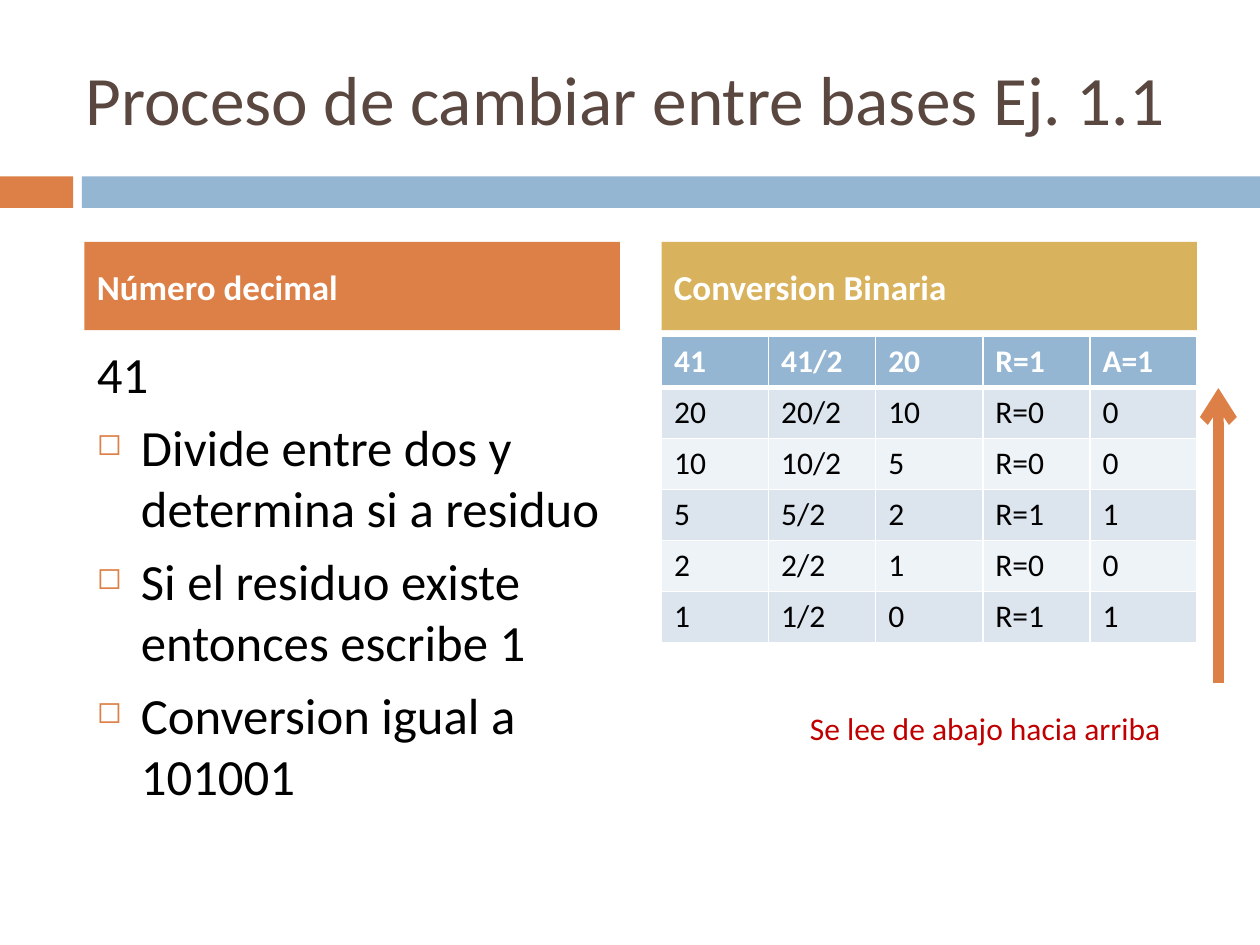
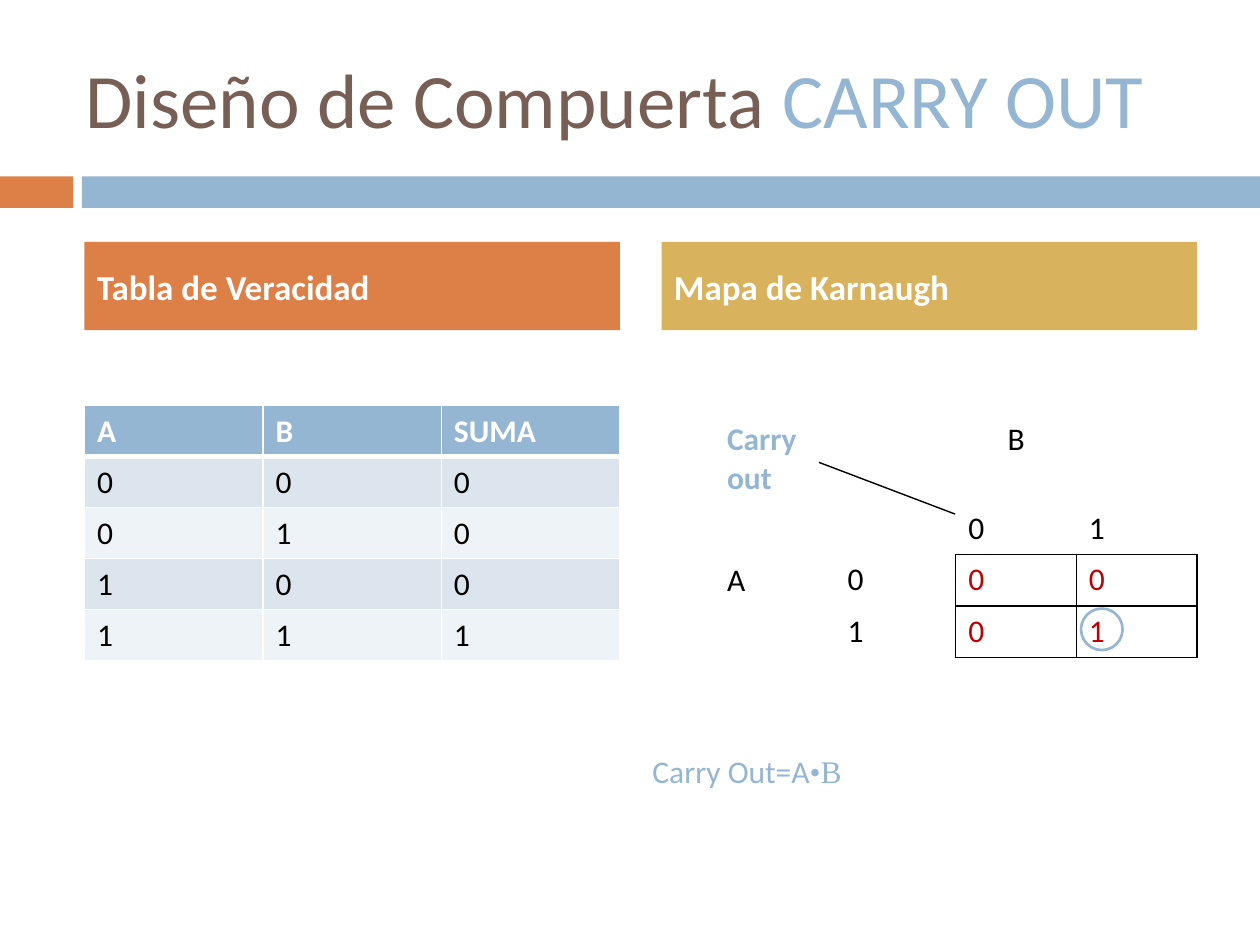
from lxml.etree import SubElement
from pptx import Presentation
from pptx.dml.color import RGBColor
from pptx.enum.shapes import MSO_CONNECTOR as CONNECTOR, MSO_SHAPE as SHAPE
from pptx.enum.text import MSO_ANCHOR as ANCHOR, MSO_AUTO_SIZE as AUTO_SIZE, PP_ALIGN as ALIGN
from pptx.oxml.ns import qn
from pptx.util import Inches, Pt

# Palette
ORANGE = RGBColor(0xDD, 0x80, 0x47)
BLUE = RGBColor(0x94, 0xB6, 0xD2)
GOLD = RGBColor(0xD8, 0xB2, 0x5C)
BROWN = RGBColor(0x77, 0x5F, 0x55)
DARK_BROWN = RGBColor(0x59, 0x47, 0x40)
RED = RGBColor(0xC0, 0x00, 0x00)
BLACK = RGBColor(0x00, 0x00, 0x00)
WHITE = RGBColor(0xFF, 0xFF, 0xFF)
BAND_DARK = RGBColor(0xDC, 0xE5, 0xEE)
BAND_LIGHT = RGBColor(0xEE, 0xF3, 0xF7)

# Shared layout, in inches
LEFT_COLUMN, RIGHT_COLUMN, COLUMN_WIDTH = 0.67, 5.25, 4.25
ROW_HEIGHT = 0.405
FONT = "Calibri"


def box(*inches):
    return [Inches(value) for value in inches]


def add_run(paragraph, text, color, size=18, **formats):
    run = paragraph.add_run()
    run.text = text
    run.font.color.rgb = color
    for name, value in {"name": FONT, "size": Pt(size), "bold": False, **formats}.items():
        setattr(run.font, name, value)


def add_text(slide, area, **frame_formats):
    frame = slide.shapes.add_textbox(*box(*area)).text_frame
    for name, value in {"word_wrap": True, **frame_formats}.items():
        setattr(frame, name, value)
    return frame


def add_block(slide, area, color):
    block = slide.shapes.add_shape(SHAPE.RECTANGLE, *box(*area))
    block.shadow.inherit = False
    block.fill.solid()
    block.fill.fore_color.rgb = color
    block.line.fill.background()
    return block


def add_heading(slide, left, text, color):
    frame = add_block(slide, (left, 1.92, COLUMN_WIDTH, 0.7), color).text_frame
    frame.vertical_anchor = ANCHOR.MIDDLE
    paragraph = frame.paragraphs[0]
    paragraph.alignment = ALIGN.LEFT
    add_run(paragraph, text, WHITE, 20, bold=True)


def start_slide(deck, title_parts, title_size, left_heading, right_heading):
    """Add a slide with the band, the title and the two column headings."""
    slide = deck.slides.add_slide(deck.slide_layouts[6])
    add_block(slide, (0, 1.4, 0.58, 0.25), ORANGE)
    add_block(slide, (0.65, 1.4, 9.35, 0.25), BLUE)
    title = add_text(slide, (0.58, 0.3, 8.92, 0.95), vertical_anchor=ANCHOR.MIDDLE)
    for text, color in title_parts:
        add_run(title.paragraphs[0], text, color, title_size)
    add_heading(slide, LEFT_COLUMN, left_heading, ORANGE)
    add_heading(slide, RIGHT_COLUMN, right_heading, GOLD)
    return slide


def add_line(slide, start, end, color, width, arrow=False):
    connector = slide.shapes.add_connector(CONNECTOR.STRAIGHT, *box(*start, *end))
    connector.line.color.rgb = color
    connector.line.width = Pt(width)
    properties = connector._element.spPr
    if arrow:
        SubElement(properties.find(qn("a:ln")), qn("a:tailEnd"), type="arrow")
    SubElement(properties, qn("a:effectLst"))


def set_borders(cell, color, widths):
    """Draw cell edges; widths maps L, R, T, B to points."""
    properties = cell._tc.get_or_add_tcPr()
    for side in "LRTB":
        if side in widths:
            edge = SubElement(properties, qn(f"a:ln{side}"), w=str(Pt(widths[side])))
            SubElement(SubElement(edge, qn("a:solidFill")), qn("a:srgbClr"), val=str(color))


def add_grid(slide, area, row_heights, column_count):
    left, top, width = area
    grid = slide.shapes.add_table(len(row_heights), column_count,
                                  *box(left, top, width, sum(row_heights))).table
    for row, height in zip(grid.rows, row_heights):
        row.height = Inches(height)
    for name in ("first_row", "horz_banding"):
        setattr(grid, name, False)
    return grid


def add_banded_table(slide, area, rows):
    grid = add_grid(slide, area, [ROW_HEIGHT] * len(rows), len(rows[0]))
    for r, values in enumerate(rows):
        header = r == 0
        fill = BLUE if header else (BAND_LIGHT, BAND_DARK)[r % 2]
        edges = {"L": 1, "R": 1, "T": 1, "B": 3} if header else {"L": 1, "R": 1, "B": 1}
        for c, value in enumerate(values):
            cell = grid.cell(r, c)
            set_borders(cell, WHITE, edges)
            cell.fill.solid()
            cell.fill.fore_color.rgb = fill
            add_run(cell.text_frame.paragraphs[0], value,
                    WHITE if header else BLACK, bold=header)


def add_karnaugh_map(slide, area, rows):
    grid = add_grid(slide, area, [0.7] + [0.41] * 3, 4)
    grid.cell(0, 1).merge(grid.cell(0, 3))
    grid.cell(1, 0).merge(grid.cell(3, 0))
    for r, values in enumerate(rows):
        for c, value in enumerate(values):
            cell = grid.cell(r, c)
            in_map = r >= 2 and c >= 2
            if in_map:
                set_borders(cell, BLACK, dict.fromkeys("LRTB", 1))
            elif r == 1 and c >= 2:
                set_borders(cell, BLACK, {"B": 1})
            elif r >= 2 and c == 1:
                set_borders(cell, BLACK, {"R": 1})
            cell.fill.background()
            if value:
                corner = r == c == 0
                color = BLUE if corner else RED if in_map else BLACK
                add_run(cell.text_frame.paragraphs[0], value, color, bold=corner)
    grid.cell(0, 1).text_frame.paragraphs[0].alignment = ALIGN.CENTER
    grid.cell(1, 0).vertical_anchor = ANCHOR.MIDDLE


def add_steps(slide, area, number, steps):
    """Write the number, then its steps with square bullets."""
    frame = add_text(slide, area)
    for i, text in enumerate([number, *steps]):
        paragraph = frame.add_paragraph() if i else frame.paragraphs[0]
        paragraph.space_before = Pt(7)
        add_run(paragraph, text, BLACK, 29)
        properties = paragraph._p.get_or_add_pPr()
        properties.set("marL", str(Inches(0.35)))
        properties.set("indent", str(Inches(-0.35)))
        if i:
            bullet_color = SubElement(properties, qn("a:buClr"))
            SubElement(bullet_color, qn("a:srgbClr"), val=str(ORANGE))
            SubElement(properties, qn("a:buSzPct"), val="60000")
            SubElement(properties, qn("a:buChar"), char="◻")


def build_base_change(deck):
    slide = start_slide(deck, [("Proceso de cambiar entre bases Ej. 1.1", DARK_BROWN)], 39.6,
                        "Número decimal", "Conversion Binaria")
    add_steps(slide, (LEFT_COLUMN, 2.67, COLUMN_WIDTH, 3.92), "41",
              ["Divide entre dos y determina si a residuo",
               "Si el residuo existe entonces escribe 1",
               "Conversion igual a 101001"])
    add_banded_table(slide, (RIGHT_COLUMN, 2.67, COLUMN_WIDTH), [
        ("41", "41/2", "20", "R=1", "A=1"),
        ("20", "20/2", "10", "R=0", "0"),
        ("10", "10/2", "5", "R=0", "0"),
        ("5", "5/2", "2", "R=1", "1"),
        ("2", "2/2", "1", "R=0", "0"),
        ("1", "1/2", "0", "R=1", "1"),
    ])
    # Reading direction
    add_line(slide, (9.67, 5.42), (9.67, 3.08), ORANGE, 6, arrow=True)
    reading_note = add_text(slide, (6.33, 5.58, 3, 0.71))
    add_run(reading_note.paragraphs[0], "Se lee de abajo hacia arriba", RED)


def build_carry_out(deck):
    slide = start_slide(deck, [("Diseño de Compuerta ", BROWN), ("CARRY OUT", BLUE)], 44,
                        "Tabla de Veracidad", "Mapa de Karnaugh")
    add_banded_table(slide, (LEFT_COLUMN, 3.22, COLUMN_WIDTH),
                     ["A B SUMA".split(), *("000", "010", "100", "111")])
    add_karnaugh_map(slide, (5.67, 3.29, 3.83), [
        ("Carry out", "B", "", ""),
        ("A", "", "0", "1"),
        ("", "0", "0", "0"),
        ("", "1", "0", "1"),
    ])
    add_line(slide, (7.58, 4.08), (6.5, 3.67), BLACK, 0.79)
    # Ring around the only 1 of the map
    ring = slide.shapes.add_shape(SHAPE.OVAL, *box(8.58, 4.83, 0.33, 0.33))
    ring.shadow.inherit = False
    ring.fill.background()
    ring.line.color.rgb = BLUE
    ring.line.width = Pt(1.5)
    # Resulting formula
    formula = add_text(slide, (5.08, 5.92, 1.81, 0.4), word_wrap=False,
                       auto_size=AUTO_SIZE.SHAPE_TO_FIT_TEXT).paragraphs[0]
    add_run(formula, "Carry Out=A", BLUE)
    add_run(formula, "•B", BLUE, name="Times New Roman")


def main():
    deck = Presentation()
    deck.slide_width, deck.slide_height = box(10, 7.5)
    build_base_change(deck)
    build_carry_out(deck)
    deck.save("out.pptx")


if __name__ == "__main__":
    main()
